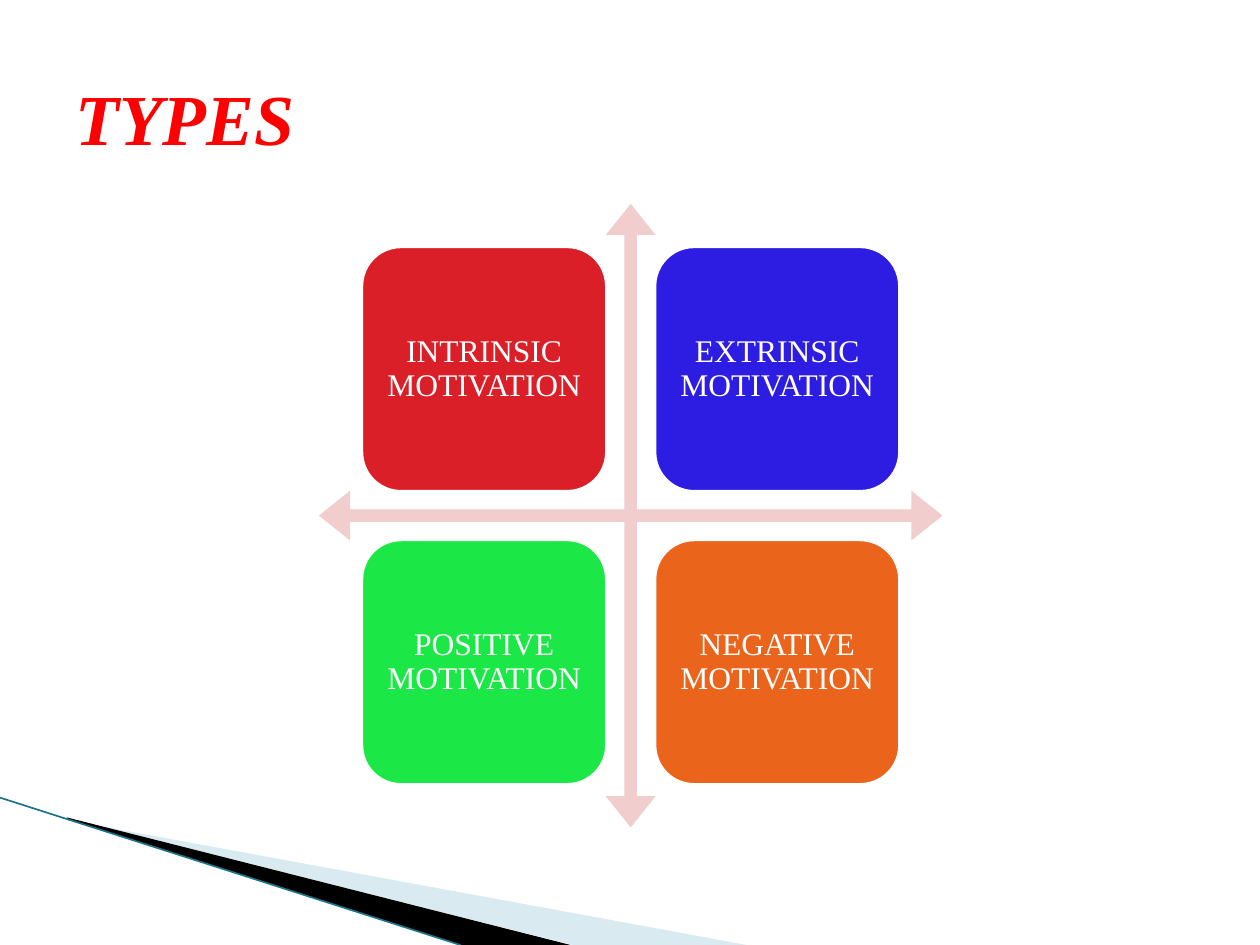
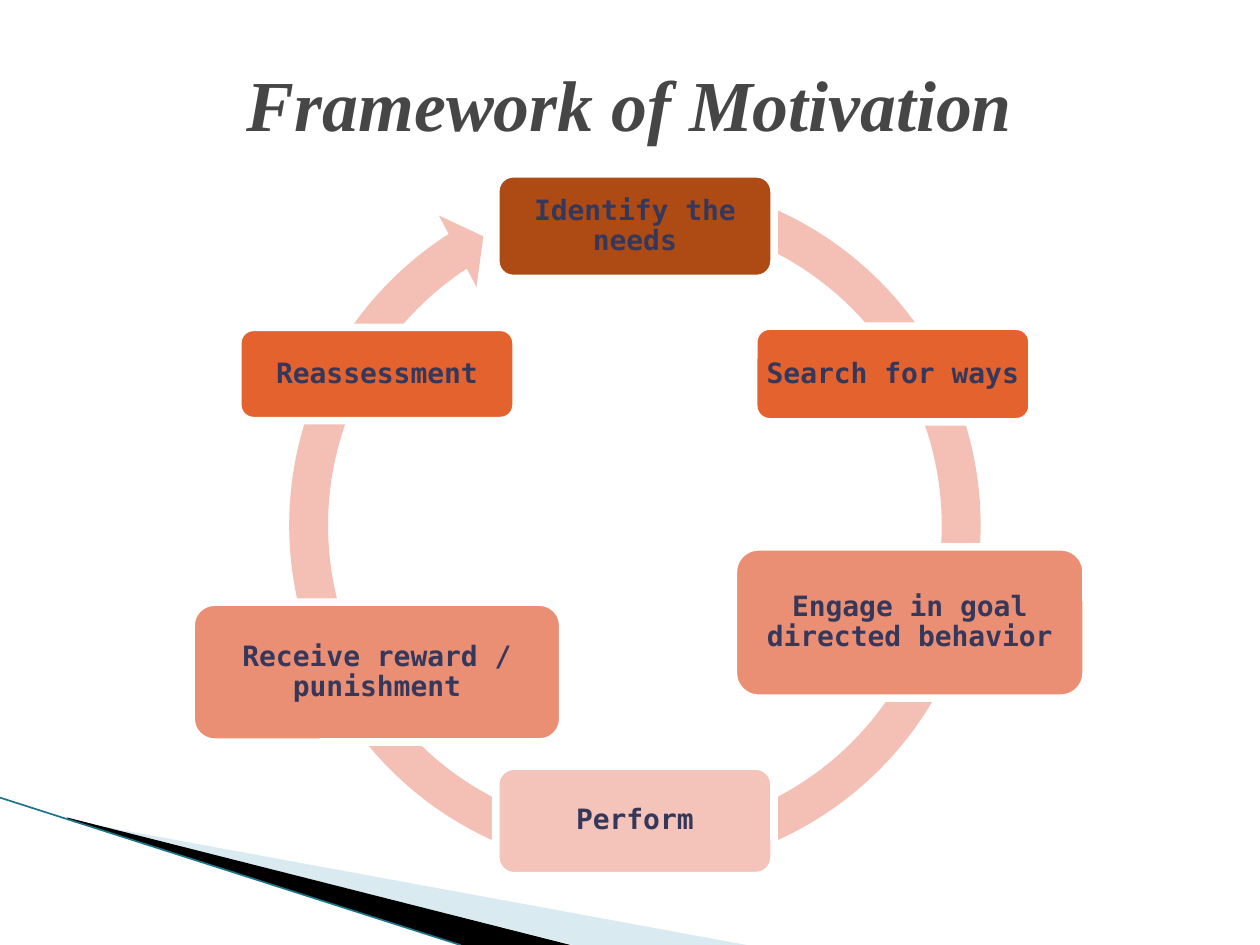
import pptx
import pptx.util
import pptx.dml.color
import pptx.enum.shapes
import pptx.enum.text
import pptx.oxml.ns
import lxml.etree

Cm = pptx.util.Cm
Pt = pptx.util.Pt
RGBColor = pptx.dml.color.RGBColor
MSO_SHAPE = pptx.enum.shapes.MSO_SHAPE
PP_ALIGN = pptx.enum.text.PP_ALIGN
qn = pptx.oxml.ns.qn

WHITE = RGBColor(0xFF, 0xFF, 0xFF)
BLACK = RGBColor(0x00, 0x00, 0x00)
PALE_BLUE = RGBColor(0xA0, 0xCB, 0xDC)
TEAL = RGBColor(0x1B, 0x74, 0x88)
TITLE_RED = RGBColor(0xFF, 0x00, 0x00)
TITLE_GREY = RGBColor(0x46, 0x46, 0x46)
CROSS_PINK = RGBColor(0xF1, 0xCD, 0xCD)
TILE_RED = RGBColor(0xDA, 0x1F, 0x28)
TILE_BLUE = RGBColor(0x2D, 0x1C, 0xE1)
TILE_GREEN = RGBColor(0x1B, 0xE7, 0x47)
TILE_ORANGE = RGBColor(0xEB, 0x64, 0x1B)
RING_PINK = RGBColor(0xF4, 0xBF, 0xB5)
STEP_BROWN = RGBColor(0xAE, 0x4A, 0x14)
STEP_ORANGE = RGBColor(0xE4, 0x62, 0x2D)
STEP_SALMON = RGBColor(0xEB, 0x8F, 0x74)
STEP_PINK = RGBColor(0xF4, 0xC3, 0xB9)
STEP_INK = RGBColor(0x35, 0x38, 0x5A)

SERIF = "Times New Roman"
MONO = "DejaVu Sans Mono"
SLIDE_WIDTH, SLIDE_HEIGHT = 25.4, 19.05

MOTIVATION_TYPES = [
    ("INTRINSIC MOTIVATION", TILE_RED),
    ("EXTRINSIC MOTIVATION", TILE_BLUE),
    ("POSITIVE MOTIVATION", TILE_GREEN),
    ("NEGATIVE MOTIVATION", TILE_ORANGE),
]

# Text, colour, centre measured from the ring's centre, size
CYCLE_STEPS = [
    ("Identify the needs", STEP_BROWN, (0, -6.03), (5.61, 2.11)),
    ("Search for ways", STEP_ORANGE, (5.2, -3.05), (5.61, 1.93)),
    ("Engage in goal directed behavior", STEP_SALMON, (5.54, 1.96), (7.11, 3.05)),
    ("Perform", STEP_PINK, (0, 5.96), (5.61, 2.21)),
    ("Receive reward / punishment", STEP_SALMON, (-5.2, 2.96), (7.49, 2.82)),
    ("Reassessment", STEP_ORANGE, (-5.2, -3.05), (5.61, 1.88)),
]


def fill_plain(shape, color):
    shape.shadow.inherit = False
    shape.fill.solid()
    shape.fill.fore_color.rgb = color
    shape.line.fill.background()


def add_preset(slide, preset, left, top, width, height, color):
    shape = slide.shapes.add_shape(preset, Cm(left), Cm(top), Cm(width), Cm(height))
    fill_plain(shape, color)
    return shape


def write_text(frame, text, font_name, size, color, align):
    frame.word_wrap = True
    frame.vertical_anchor = pptx.enum.text.MSO_ANCHOR.MIDDLE
    paragraph = frame.paragraphs[0]
    paragraph.text = text
    paragraph.alignment = align
    paragraph.font.name = font_name
    paragraph.font.size = Pt(size)
    paragraph.font.color.rgb = color
    return paragraph


def add_card(slide, box, text, color, font_name, size, ink):
    """Rounded card with a white rim and centred text."""
    card = add_preset(slide, MSO_SHAPE.ROUNDED_RECTANGLE, *box, color)
    card.line.color.rgb = WHITE
    card.line.width = Pt(4.33)
    frame = card.text_frame
    frame.margin_left = frame.margin_right = Cm(0.15)
    frame.margin_top = frame.margin_bottom = Cm(0.15)
    paragraph = write_text(frame, text, font_name, size, ink, PP_ALIGN.CENTER)
    paragraph.line_spacing = 0.9
    return paragraph


def add_wedge(slide, corners, color):
    start, *others = [(Cm(x), Cm(y)) for x, y in corners]
    outline = slide.shapes.build_freeform(*start)
    outline.add_line_segments(others)
    wedge = outline.convert_to_shape()
    fill_plain(wedge, color)
    return wedge


def add_corner_band(slide):
    # Translucent blue wedge, then the black one over it
    pale = add_wedge(slide, [(1.4, 16.54), (15.05, SLIDE_HEIGHT),
                             (11.55, SLIDE_HEIGHT), (1.4, 16.51)], PALE_BLUE)
    tint = pale.fill._xPr.find(qn("a:solidFill"))[0]
    lxml.etree.SubElement(tint, qn("a:alpha"), val="40000")
    add_wedge(slide, [(1.35, 16.48), (11.5, SLIDE_HEIGHT),
                      (9.3, SLIDE_HEIGHT), (1.37, 16.51)], BLACK)
    # Thin edge line
    edge = slide.shapes.add_connector(
        pptx.enum.shapes.MSO_CONNECTOR.STRAIGHT,
        Cm(0), Cm(16.08), Cm(9.28), Cm(SLIDE_HEIGHT))
    edge.line.color.rgb = TEAL
    edge.line.width = Pt(0.95)
    lxml.etree.SubElement(edge._element.spPr, qn("a:effectLst"))


def add_title(slide, text, color, height, align):
    title = slide.shapes.add_textbox(Cm(1.27), Cm(0.76), Cm(22.86), Cm(height))
    paragraph = write_text(title.text_frame, text, SERIF, 41, color, align)
    paragraph.font.bold = True
    paragraph.font.italic = True


def add_type_matrix(slide, left, top, side):
    """Four-way arrow with one tile in each quarter."""
    cross = add_preset(slide, MSO_SHAPE.QUAD_ARROW, left, top, side, side, CROSS_PINK)
    for index, value in enumerate((0.02, 0.04, 0.05)):
        cross.adjustments[index] = value

    tile, margin, pitch = 0.4 * side, 0.065 * side, 0.47 * side
    for index, (text, color) in enumerate(MOTIVATION_TYPES):
        row, column = divmod(index, 2)
        box = (left + margin + column * pitch, top + margin + row * pitch, tile, tile)
        add_card(slide, box, text, color, SERIF, 18, WHITE)


def add_cycle(slide, left, top, side):
    """Circular arrow with the steps laid over it."""
    ring = add_preset(slide, MSO_SHAPE.CIRCULAR_ARROW, left, top, side, side, RING_PINK)
    for index, value in enumerate((0.053, 3.126, 142.268, 171.278, 0.055)):
        ring.adjustments[index] = value

    center_x, center_y = left + side / 2, top + side / 2
    for text, color, (dx, dy), (width, height) in CYCLE_STEPS:
        box = (center_x + dx - width / 2, center_y + dy - height / 2, width, height)
        step = add_card(slide, box, text, color, MONO, 16, STEP_INK)
        step.font.bold = True


def add_slide(deck):
    slide = deck.slides.add_slide(deck.slide_layouts[6])
    add_corner_band(slide)
    return slide


def main():
    deck = pptx.Presentation()
    deck.slide_width, deck.slide_height = Cm(SLIDE_WIDTH), Cm(SLIDE_HEIGHT)

    types = add_slide(deck)
    add_type_matrix(types, 6.43, 4.11, 12.57)
    add_title(types, "TYPES", TITLE_RED, 3.18, PP_ALIGN.LEFT)

    framework = add_slide(deck)
    add_title(framework, "Framework of Motivation", TITLE_GREY, 2.62, PP_ALIGN.CENTER)
    add_cycle(framework, 5.41, 3.2, 14.78)

    deck.save("out.pptx")


if __name__ == "__main__":
    main()
